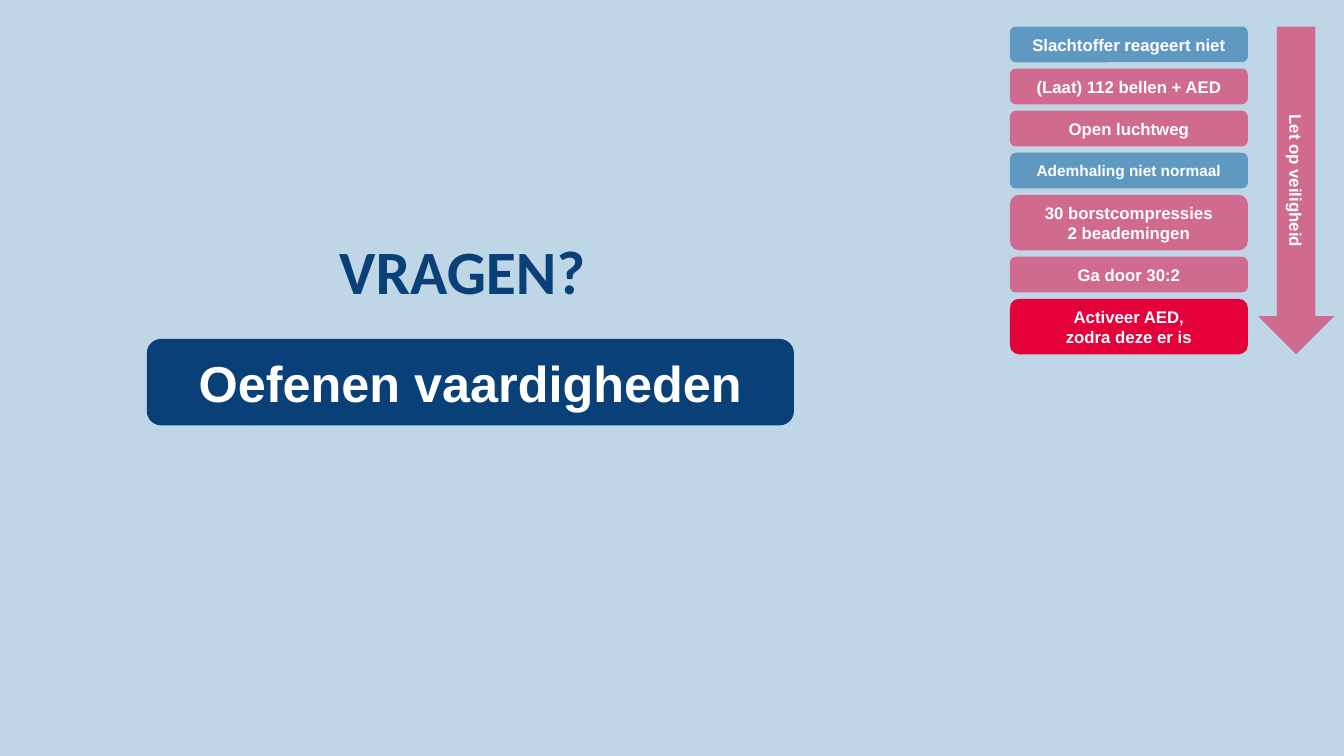
from lxml.etree import SubElement
from pptx import Presentation
from pptx.dml.color import RGBColor
from pptx.enum.shapes import MSO_SHAPE
from pptx.enum.text import MSO_ANCHOR, MSO_AUTO_SIZE, PP_ALIGN
from pptx.oxml.ns import qn
from pptx.util import Cm, Pt

PINK_RED = "E40038"
BLUE = "005D9F"
NAVY = "084077"
WHITE = "FFFFFF"


def format_text(text_frame, font_name, size, color):
    for paragraph in text_frame.paragraphs:
        paragraph.alignment = PP_ALIGN.CENTER
        for run in paragraph.runs:
            run.font.name = font_name
            run.font.size = Pt(size)
            run.font.bold = True
            run.font.color.rgb = RGBColor.from_string(color)


def add_label(preset, left, top, width, height, text, size, color, opacity=100):
    """Add a filled shape with centred white text; opacity is in percent."""
    shape = slide.shapes.add_shape(preset, Cm(left), Cm(top), Cm(width), Cm(height))
    shape.shadow.inherit = False
    shape.line.fill.background()
    shape.fill.solid()
    shape.fill.fore_color.rgb = RGBColor.from_string(color)
    if opacity < 100:
        color_element = shape.fill._xPr.find(qn("a:solidFill"))[0]
        SubElement(color_element, qn("a:alpha"), val=str(opacity * 1000))
    shape.text_frame.text = text
    shape.text_frame.vertical_anchor = MSO_ANCHOR.MIDDLE
    format_text(shape.text_frame, "Arial", size, WHITE)
    return shape


presentation = Presentation()
presentation.slide_width = Cm(33.87)
presentation.slide_height = Cm(19.05)
slide = presentation.slides.add_slide(presentation.slide_layouts[5])
slide.background.fill.solid()
slide.background.fill.fore_color.rgb = RGBColor.from_string("BFD6E7")

# Resuscitation steps, stacked with equal gaps
steps = [
    ("Slachtoffer reageert niet", 12, BLUE, 50),
    ("(Laat) 112 bellen + AED", 12, PINK_RED, 50),
    ("Open luchtweg", 12, PINK_RED, 50),
    ("Ademhaling niet normaal", 11, BLUE, 50),
    ("30 borstcompressies\n2 beademingen", 12, PINK_RED, 50),
    ("Ga door 30:2", 12, PINK_RED, 50),
    ("Activeer AED,\nzodra deze er is", 12, PINK_RED, 100),
]
steps_top = 0.67
step_gap = 0.16
top = steps_top
for text, size, color, opacity in steps:
    height = 1.4 if "\n" in text else 0.9
    add_label(MSO_SHAPE.ROUNDED_RECTANGLE, 25.45, top, 6, height,
              text, size, color, opacity)
    top += height + step_gap

# Safety arrow beside the whole stack
safety_arrow = add_label(MSO_SHAPE.DOWN_ARROW, 31.7, steps_top, 1.93,
                         top - step_gap - steps_top,
                         "Let op veiligheid", 12, PINK_RED, 50)
safety_arrow.text_frame._txBody.bodyPr.set("vert", "vert")

# Practice banner and title
add_label(MSO_SHAPE.ROUNDED_RECTANGLE, 3.7, 8.54, 16.31, 2.18,
          "Oefenen vaardigheden", 36, NAVY)

title = slide.shapes.title
title.left, title.top, title.width, title.height = Cm(1.2), Cm(5.75), Cm(20.9), Cm(2.18)
title.text_frame.text = "VRAGEN?"
title.text_frame.word_wrap = True
title.text_frame.auto_size = MSO_AUTO_SIZE.NONE
title.text_frame.vertical_anchor = MSO_ANCHOR.TOP
format_text(title.text_frame, "Calibri", 44, NAVY)

presentation.save("out.pptx")
